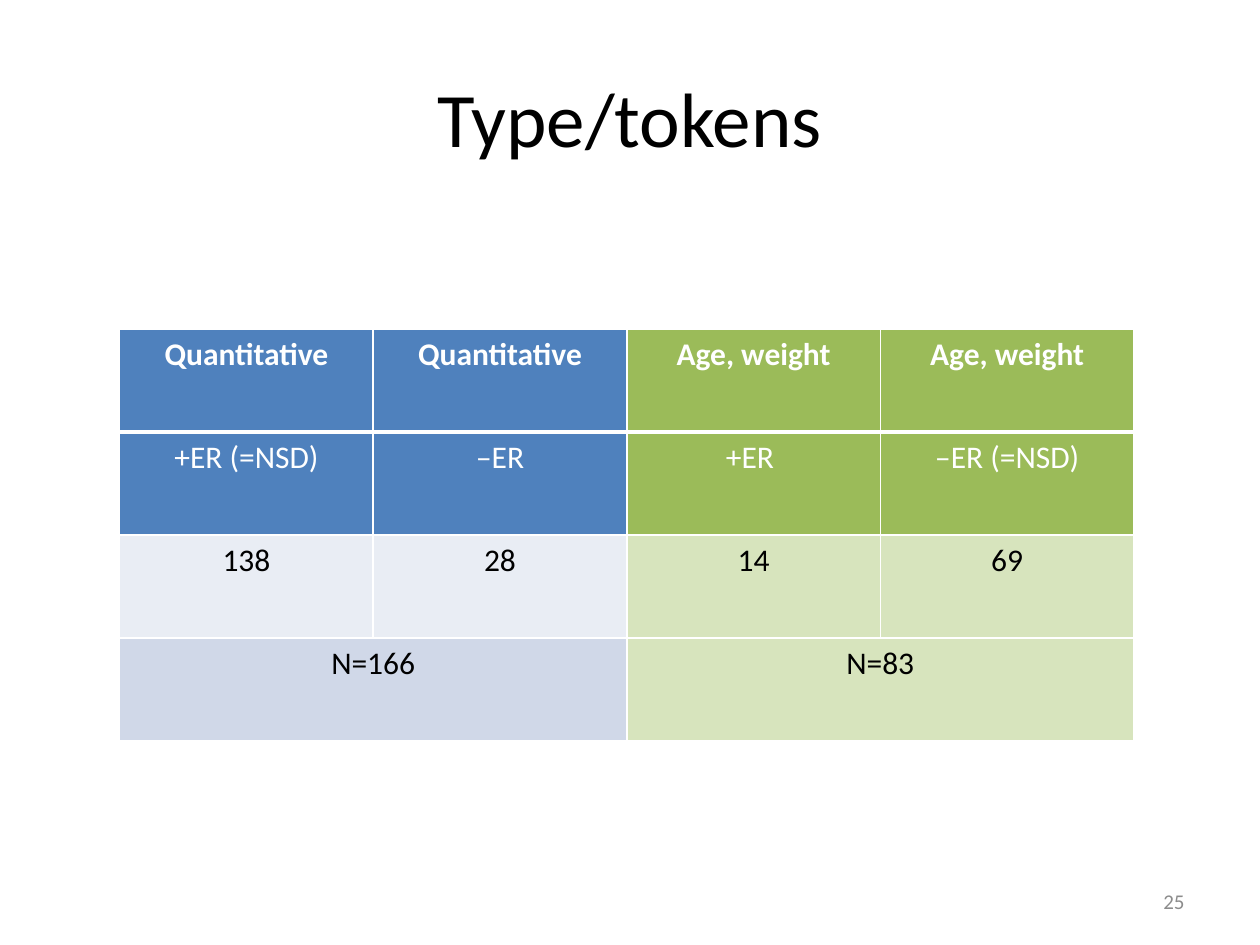
from lxml.etree import SubElement
from pptx import Presentation
from pptx.dml.color import RGBColor
from pptx.enum.text import MSO_ANCHOR, PP_ALIGN
from pptx.oxml.ns import qn
from pptx.util import Inches, Pt

COLORS = {
    "white": "FFFFFF", "black": "000000", "gray": "8C8C8C",
    "blue": "4F81BD", "blue_light": "E9EDF4", "blue_mid": "D0D8E8",
    "green": "9BBB59", "green_light": "D7E4BD",
}

# Texts, fills of the left and right halves, font format
ROWS = [
    (["Quantitative", "Quantitative", "Age, weight", "Age, weight"],
     ("blue", "green"), {"color": "white", "bold": True}),
    (["+ER (=NSD)", "‒ER", "+ER ", "‒ER (=NSD)"],
     ("blue", "green"), {"color": "white", "bold": False}),
    (["138", "28", "14", "69"],
     ("blue_light", "green_light"), {"color": "black", "bold": False}),
    (["N=166", None, "N=83", None],
     ("blue_mid", "green_light"), {"color": "black", "bold": False}),
]


def rgb(name):
    return RGBColor.from_string(COLORS[name])


class SlideBuilder:
    font = "Calibri"

    def __init__(self, slide):
        self.slide = slide

    def fill_text(self, tf, text, align, color, **fmt):
        p = tf.paragraphs[0]
        p.alignment = align
        r = p.add_run()
        r.text = text
        for name, value in {"name": self.font, **fmt}.items():
            setattr(r.font, name, value)
        r.font.color.rgb = rgb(color)

    def text(self, box, text, align, **fmt):
        tf = self.slide.shapes.add_textbox(*map(Inches, box)).text_frame
        tf.word_wrap = True
        tf.vertical_anchor = MSO_ANCHOR.MIDDLE
        self.fill_text(tf, text, align, **fmt)

    def border(self, cell, **widths):
        """Draw white cell edges; the edges must precede the fill in tcPr."""
        tcPr = cell._tc.get_or_add_tcPr()
        for side, width in widths.items():
            ln = SubElement(tcPr, qn(f"a:ln{side}"), w=str(Pt(width)))
            fill = SubElement(ln, qn("a:solidFill"))
            SubElement(fill, qn("a:srgbClr"), val=COLORS["white"])

    def table(self, box, rows):
        n_cols = len(rows[0][0])
        table = self.slide.shapes.add_table(
            len(rows), n_cols, *map(Inches, box)).table
        for i, (texts, fills, fmt) in enumerate(rows):
            for j, text in enumerate(texts):
                cell = table.cell(i, j)
                self.border(cell, L=1, R=1, T=3 if i == 1 else 1,
                            B=3 if i == 0 else 1)
                cell.fill.solid()
                cell.fill.fore_color.rgb = rgb(fills[j * 2 // n_cols])
                if text is None:
                    table.cell(i, j - 1).merge(cell)
                else:
                    self.fill_text(cell.text_frame, text, PP_ALIGN.CENTER,
                                   size=Pt(18), **fmt)


def main():
    prs = Presentation()
    prs.slide_width, prs.slide_height = Inches(10), Inches(7.5)
    s = SlideBuilder(prs.slides.add_slide(prs.slide_layouts[6]))
    s.text((0.5, 0.3, 9, 1.25), "Type/tokens", PP_ALIGN.CENTER,
           color="black", size=Pt(44))
    s.text((7.17, 6.95, 2.33, 0.4), "25", PP_ALIGN.RIGHT,
           color="gray", size=Pt(12))
    s.table((0.95, 2.61, 8.05, 3.27), ROWS)
    prs.save("out.pptx")


if __name__ == "__main__":
    main()
